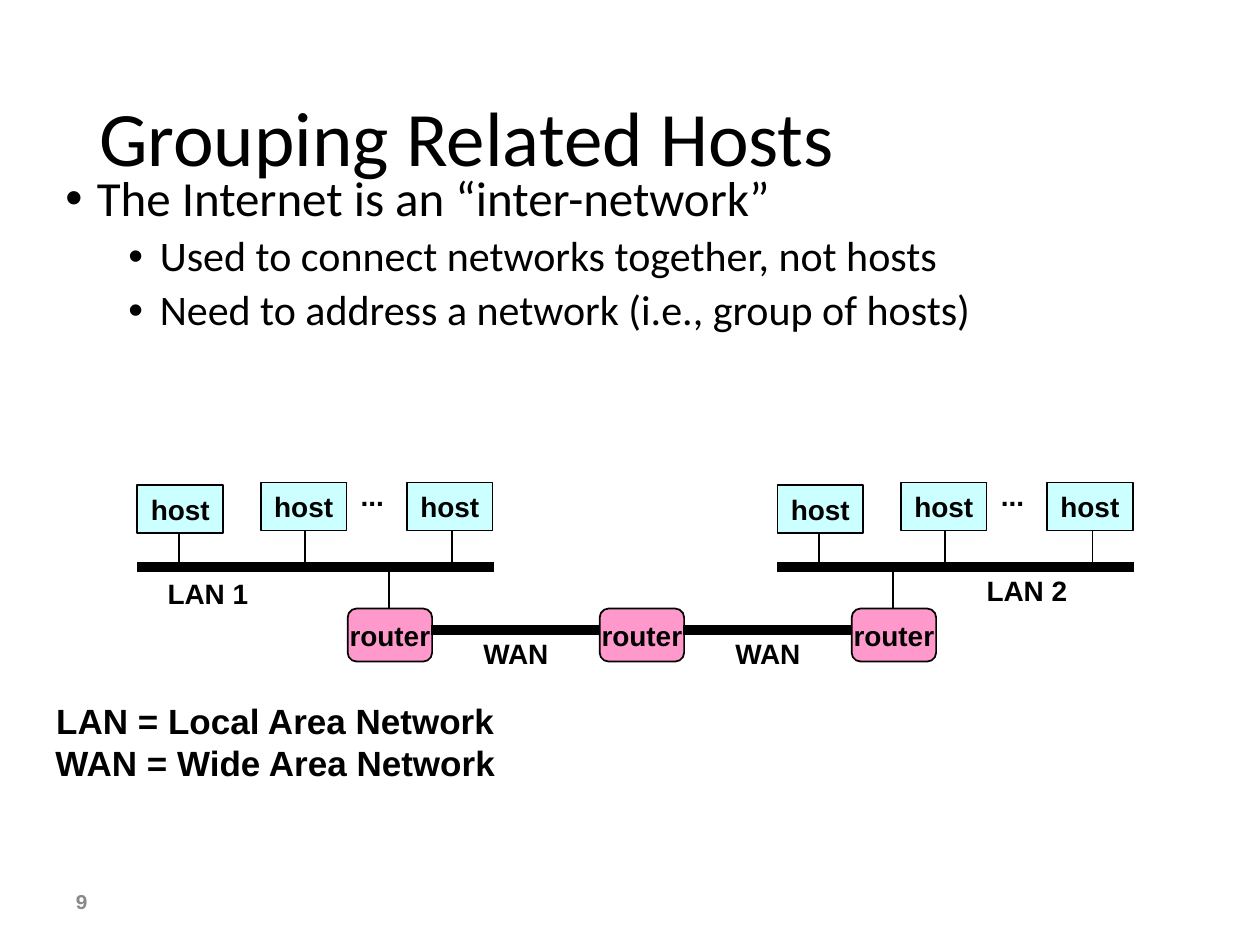
from dataclasses import dataclass

from lxml.etree import SubElement
from pptx import Presentation
from pptx.dml.color import RGBColor as RGB
from pptx.enum.shapes import MSO_CONNECTOR as Link, MSO_SHAPE as Preset
from pptx.enum.text import MSO_ANCHOR as Anchor, MSO_AUTO_SIZE as AutoSize, PP_ALIGN as Align
from pptx.oxml.ns import qn
from pptx.util import Inches, Pt


@dataclass(frozen=True)
class Theme:
    ink: RGB = RGB(0x00, 0x00, 0x00)
    muted: RGB = RGB(0x89, 0x89, 0x89)
    host: RGB = RGB(0xCC, 0xFF, 0xFF)
    router: RGB = RGB(0xFF, 0x99, 0xCC)
    text_font: str = "Calibri"
    diagram_font: str = "Arial"
    number_font: str = "Courier New"
    title: int = 44
    bullets: tuple = (28, 24)
    legend: int = 20
    label: int = 16
    number: int = 12
    thin: int = 1
    thick: int = 6


class NetworkSlide:
    def __init__(self, slide, theme):
        self.shapes = slide.shapes
        self.theme = theme

    def add_run(self, paragraph, text, size, font, color=None, bold=False):
        run = paragraph.add_run()
        run.text = text
        run.font.size = Pt(size)
        run.font.name = font
        run.font.bold = bold
        run.font.color.rgb = color or self.theme.ink

    def text_box(self, box, anchor=Anchor.TOP):
        frame = self.shapes.add_textbox(*map(Inches, box)).text_frame
        frame.word_wrap = True
        frame.vertical_anchor = anchor
        return frame

    def title(self, text, box):
        paragraph = self.text_box(box, Anchor.MIDDLE).paragraphs[0]
        paragraph.line_spacing = 0.9
        self.add_run(paragraph, text, self.theme.title, self.theme.text_font)

    def bullets(self, items, box):
        frame = self.text_box(box)
        for i, (level, text) in enumerate(items):
            paragraph = frame.add_paragraph() if i else frame.paragraphs[0]
            paragraph.level = level
            paragraph.line_spacing = 0.9
            paragraph.space_before = Pt((10, 5)[level])
            props = paragraph._p.get_or_add_pPr()
            props.set("marL", str(Inches(0.25 + 0.5 * level)))
            props.set("indent", str(Inches(-0.25)))
            SubElement(props, qn("a:buFont")).set("typeface", "Arial")
            SubElement(props, qn("a:buChar")).set("char", "•")
            self.add_run(paragraph, text, self.theme.bullets[level], self.theme.text_font)

    def page_number(self, text, box):
        paragraph = self.text_box(box, Anchor.MIDDLE).paragraphs[0]
        self.add_run(paragraph, text, self.theme.number, self.theme.number_font,
                     self.theme.muted, bold=True)

    def diagram_text(self, frame, lines, size, anchor=Anchor.MIDDLE, grow=True):
        frame.word_wrap = False
        frame.auto_size = AutoSize.SHAPE_TO_FIT_TEXT if grow else AutoSize.NONE
        frame.vertical_anchor = anchor
        for i, line in enumerate(lines):
            paragraph = frame.add_paragraph() if i else frame.paragraphs[0]
            paragraph.alignment = Align.CENTER
            self.add_run(paragraph, line, size, self.theme.diagram_font, bold=True)

    def label(self, text, box):
        self.diagram_text(self.text_box(box), [text], self.theme.label)

    def legend(self, lines, box):
        self.diagram_text(self.text_box(box), lines, self.theme.legend, Anchor.TOP)

    def node(self, text, box, preset, fill, grow):
        node = self.shapes.add_shape(preset, *map(Inches, box))
        node.shadow.inherit = False
        node.fill.solid()
        node.fill.fore_color.rgb = fill
        node.line.color.rgb = self.theme.ink
        node.line.width = Pt(self.theme.thin)
        self.diagram_text(node.text_frame, [text], self.theme.label, grow=grow)

    def host(self, left, top):
        self.node("host", (left, top, 0.68, 0.38), Preset.RECTANGLE, self.theme.host, True)

    def router(self, left, top):
        self.node("router", (left, top, 0.67, 0.42), Preset.ROUNDED_RECTANGLE,
                  self.theme.router, False)

    def wire(self, start, end, width):
        wire = self.shapes.add_connector(Link.STRAIGHT, *map(Inches, (*start, *end)))
        wire.line.color.rgb = self.theme.ink
        wire.line.width = Pt(width)
        SubElement(wire._element.spPr, qn("a:effectLst"))

    def lan(self, left, name, name_at):
        bus_y = 4.5
        self.wire((left, bus_y), (left + 2.83, bus_y), self.theme.thick)
        for drop in (0.33, 1.33, 2.5):
            self.wire((left + drop, 4.17), (left + drop, bus_y), self.theme.thin)
        for offset, top in ((0, 3.85), (0.98, 3.83), (2.14, 3.83)):
            self.host(left + offset, top)
        self.label(name, (*name_at, 0.84, 0.37))
        self.label("...", (left + 1.67, 3.75, 0.39, 0.37))


def main():
    deck = Presentation()
    deck.slide_width, deck.slide_height = Inches(10), Inches(7.5)
    theme = Theme()
    page = NetworkSlide(deck.slides.add_slide(deck.slide_layouts[6]), theme)

    # Heading, bullets and page number
    page.title("Grouping Related Hosts", (0.69, 0.4, 8.62, 1.45))
    page.bullets([
        (0, "The Internet is an “inter-network”"),
        (1, "Used to connect networks together, not hosts"),
        (1, "Need to address a network (i.e., group of hosts)"),
    ], (0.42, 1.33, 9.08, 5.37))
    page.page_number("9", (0.5, 6.95, 2.33, 0.4))

    # Local networks
    page.lan(1.09, "LAN 1", (1.23, 4.52))
    page.lan(6.17, "LAN 2", (7.73, 4.5))

    # Routers, the outer two joined to their local network
    first_router, router_step = 2.76, 2
    routers = [first_router + router_step * i for i in range(3)]
    for left in routers:
        page.router(left, 4.83)
    for left in (routers[0], routers[-1]):
        page.wire((left + 0.33, 4.5), (left + 0.33, 4.83), theme.thin)

    # Wide area links between neighbouring routers
    for left, right in zip(routers, routers[1:]):
        page.wire((left + 0.66, 5), (right, 5), theme.thick)
        page.label("WAN", (left + 0.97, 5, 0.73, 0.37))

    # Legend
    page.legend(["LAN = Local Area Network", "WAN = Wide Area Network"],
                (0.33, 5.5, 3.71, 0.77))

    deck.save("out.pptx")


if __name__ == "__main__":
    main()
